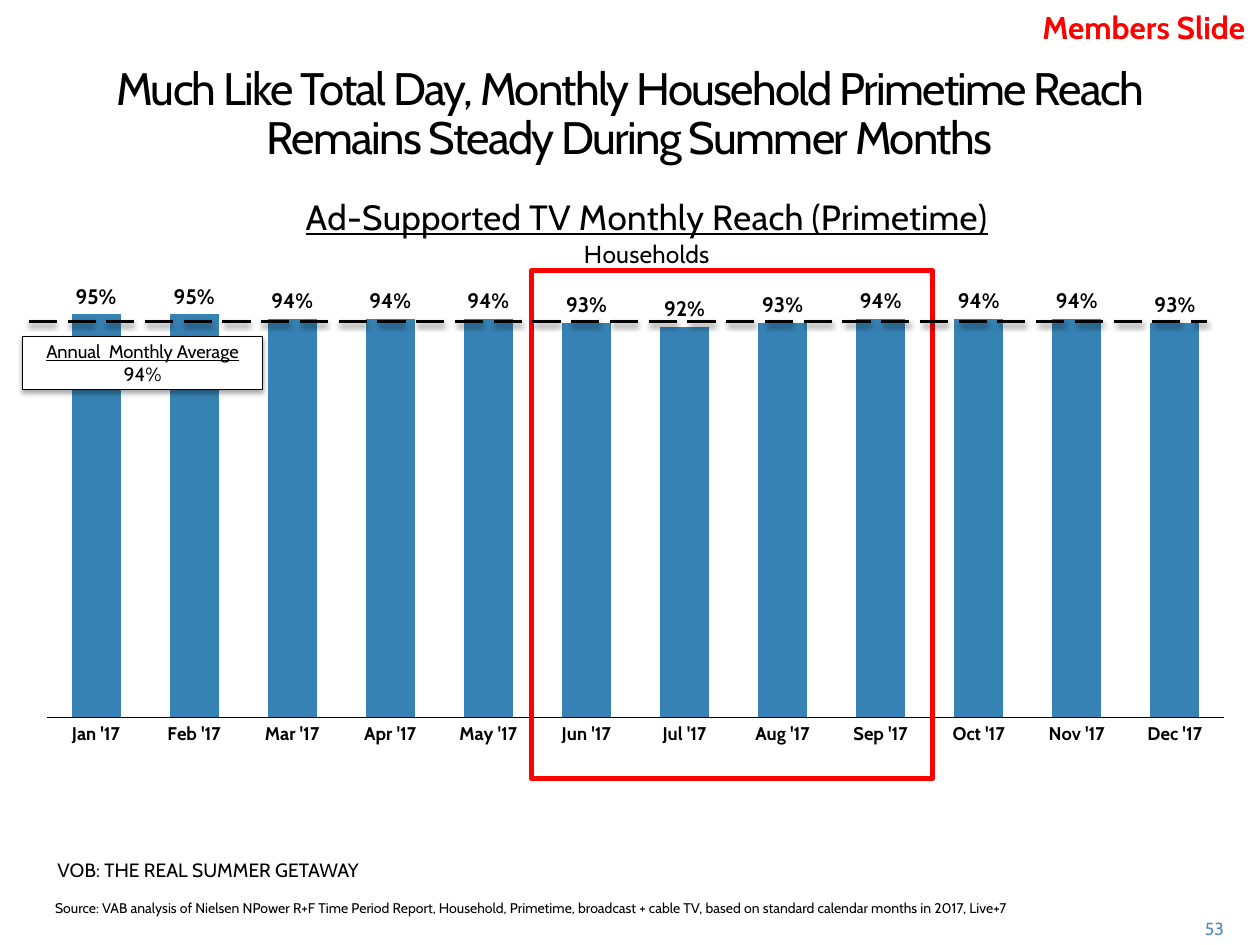
from dataclasses import dataclass
from lxml import etree
from pptx import Presentation
from pptx import util as u
from pptx.chart import data
from pptx.dml import color
from pptx.enum import chart as ch, dml, shapes, text
from pptx.oxml import ns, parse_xml

FONT = "Cabin"
BLACK, WHITE, RED, BLUE, PALE_BLUE = "000000", "FFFFFF", "FF0000", "3682B4", "508ABA"
LEFT, CENTER, RIGHT = text.PP_ALIGN.LEFT, text.PP_ALIGN.CENTER, text.PP_ALIGN.RIGHT


@dataclass
class Box:
    left: float
    top: float
    width: float
    height: float

    def lengths(self) -> tuple:
        return tuple(u.Cm(v) for v in (self.left, self.top, self.width, self.height))


@dataclass
class Line:
    words: str
    size: float
    color: str = BLACK
    align: int = LEFT
    bold: bool = False
    underline: bool = False


@dataclass
class Label:
    box: Box
    line: Line


LABELS = [
    Label(Box(23.37, 18.39, 1.55, 0.64), Line("53", 10, PALE_BLUE, RIGHT)),
    Label(Box(0.86, 18.01, 20.55, 0.66),
          Line("Source: VAB analysis of Nielsen NPower R+F Time Period Report, Household, "
               "Primetime, broadcast + cable TV, based on standard calendar months in 2017, "
               "Live+7", 8)),
    Label(Box(20.5, 0.03, 4.85, 1.02), Line("Members Slide", 18, RED, RIGHT, bold=True)),
    Label(Box(0.91, 17.17, 6.63, 1.19), Line("VOB: THE REAL SUMMER GETAWAY", 11)),
]
MONTHS = "Jan Feb Mar Apr May Jun Jul Aug Sep Oct Nov Dec".split()
REACH = [0.95, 0.95, 0.94, 0.94, 0.94, 0.93, 0.92, 0.93, 0.94, 0.94, 0.94, 0.93]


def rgb(value: str) -> color.RGBColor:
    return color.RGBColor.from_string(value)


def style_font(font, size: float, hex_color: str = BLACK, bold: bool = False,
               underline: bool = False) -> None:
    font.name = FONT
    font.size = u.Pt(size)
    font.bold = bold
    font.underline = underline
    font.color.rgb = rgb(hex_color)


def write(tf, lines: list[Line]) -> None:
    for i, line in enumerate(lines):
        p = tf.paragraphs[0] if i == 0 else tf.add_paragraph()
        p.alignment = line.align
        p.space_before = u.Pt(0)
        p.add_run().text = line.words
        style_font(p.font, line.size, line.color, line.bold, line.underline)


def style_line(line, hex_color: str, width: float) -> None:
    line.color.rgb = rgb(hex_color)
    line.width = u.Pt(width)


def add_shadow(sp, opacity: int, distance: float) -> None:
    sp._element.spPr.append(parse_xml(
        f'<a:effectLst {ns.nsdecls("a")}><a:outerShdw blurRad="{u.Pt(3.1)}" '
        f'dist="{u.Pt(distance)}" dir="5400000" rotWithShape="0"><a:srgbClr val="{BLACK}">'
        f'<a:alpha val="{opacity * 1000}"/></a:srgbClr></a:outerShdw></a:effectLst>'))


def set_layout(parent, **values) -> None:
    for old in parent.findall(ns.qn("c:layout")):
        parent.remove(old)
    layout = etree.Element(ns.qn("c:layout"))
    manual = etree.SubElement(layout, ns.qn("c:manualLayout"))
    for key, value in values.items():
        etree.SubElement(manual, ns.qn(f"c:{key}")).set("val", str(value))
    before = parent.find(ns.qn("c:tx"))
    parent.insert(0 if before is None else 1, layout)


def add_title(s) -> None:
    sp = s.shapes.title
    sp.left, sp.top, sp.width, sp.height = Box(0.46, 1.07, 24.46, 2.46).lengths()
    tf = sp.text_frame
    tf.auto_size = text.MSO_AUTO_SIZE.NONE
    tf.vertical_anchor = text.MSO_ANCHOR.MIDDLE
    write(tf, [Line("Much Like Total Day, Monthly Household Primetime Reach "
                    "Remains Steady During Summer Months", 26, align=CENTER)])
    p = tf.paragraphs[0]
    p.line_spacing = u.Pt(28)
    p.runs[0].font._element.set("spc", "-100")


def add_reach_chart(s) -> None:
    values = data.CategoryChartData(number_format="0%")
    values.categories = [f"{month} '17" for month in MONTHS]
    values.add_series("Series 1", REACH)
    chart = s.shapes.add_chart(ch.XL_CHART_TYPE.COLUMN_CLUSTERED,
                               *Box(0.46, 3.71, 24.46, 12.22).lengths(), values).chart
    style_font(chart.font, 10)
    chart.has_legend = False
    chart.has_title = True
    write(chart.chart_title.text_frame, [
        Line("Ad-Supported TV Monthly Reach (Primetime)", 20, align=CENTER, underline=True),
        Line("Households", 14, align=CENTER)])
    set_layout(chart.chart_title._element, xMode="edge", yMode="edge", x=0.23, y=0.01)
    set_layout(chart._chartSpace.chart.plotArea, layoutTarget="inner", xMode="edge",
               yMode="edge", x=0.02, y=0.18, w=0.97, h=0.7)

    axis = chart.category_axis
    axis.major_tick_mark = ch.XL_TICK_MARK.NONE
    style_font(axis.tick_labels.font, 10.5, bold=True)
    style_line(axis.format.line, BLACK, 0.75)
    scale = chart.value_axis
    scale.minimum_scale, scale.maximum_scale = 0, 1
    scale.has_major_gridlines = False
    scale.visible = False

    plot = chart.plots[0]
    plot.gap_width, plot.overlap = 100, -27
    plot.vary_by_categories = False
    fill = plot.series[0].format.fill
    fill.solid()
    fill.fore_color.rgb = rgb(BLUE)
    plot.has_data_labels = True
    labels = plot.data_labels
    labels.show_value = True
    labels.number_format, labels.number_format_is_linked = "0%", False
    labels.position = ch.XL_LABEL_POSITION.OUTSIDE_END
    style_font(labels.font, 12, bold=True)


def add_rectangle(s, box: Box, line_color: str, width: float):
    sp = s.shapes.add_shape(shapes.MSO_SHAPE.RECTANGLE, *box.lengths())
    sp.fill.background()
    style_line(sp.line, line_color, width)
    return sp


def add_average_box(s) -> None:
    sp = add_rectangle(s, Box(0.46, 6.78, 4.83, 1.07), BLACK, 0.75)
    sp.fill.solid()
    sp.fill.fore_color.rgb = rgb(WHITE)
    add_shadow(sp, 35, 1.8)
    tf = sp.text_frame
    tf.word_wrap = True
    tf.vertical_anchor = text.MSO_ANCHOR.MIDDLE
    write(tf, [Line("Annual  Monthly Average", 10.5, align=CENTER, underline=True),
               Line("94%", 11, align=CENTER)])


def add_average_line(s) -> None:
    y = u.Cm(6.48)
    sp = s.shapes.add_connector(shapes.MSO_CONNECTOR.STRAIGHT, u.Cm(0.58), y, u.Cm(24.33), y)
    style_line(sp.line, BLACK, 2)
    sp.line.dash_style = dml.MSO_LINE.LONG_DASH
    add_shadow(sp, 38, 1.6)


def add_label(s, label: Label) -> None:
    tf = s.shapes.add_textbox(*label.box.lengths()).text_frame
    tf.word_wrap = True
    write(tf, [label.line])


def main() -> None:
    prs = Presentation()
    prs.slide_width, prs.slide_height = u.Cm(25.4), u.Cm(19.05)
    s = prs.slides.add_slide(prs.slide_layouts[5])
    add_title(s)
    add_reach_chart(s)
    add_rectangle(s, Box(10.72, 5.46, 8.08, 10.24), RED, 3).shadow.inherit = False
    add_average_box(s)
    add_average_line(s)
    for label in LABELS:
        add_label(s, label)
    prs.save("out.pptx")


if __name__ == "__main__":
    main()
